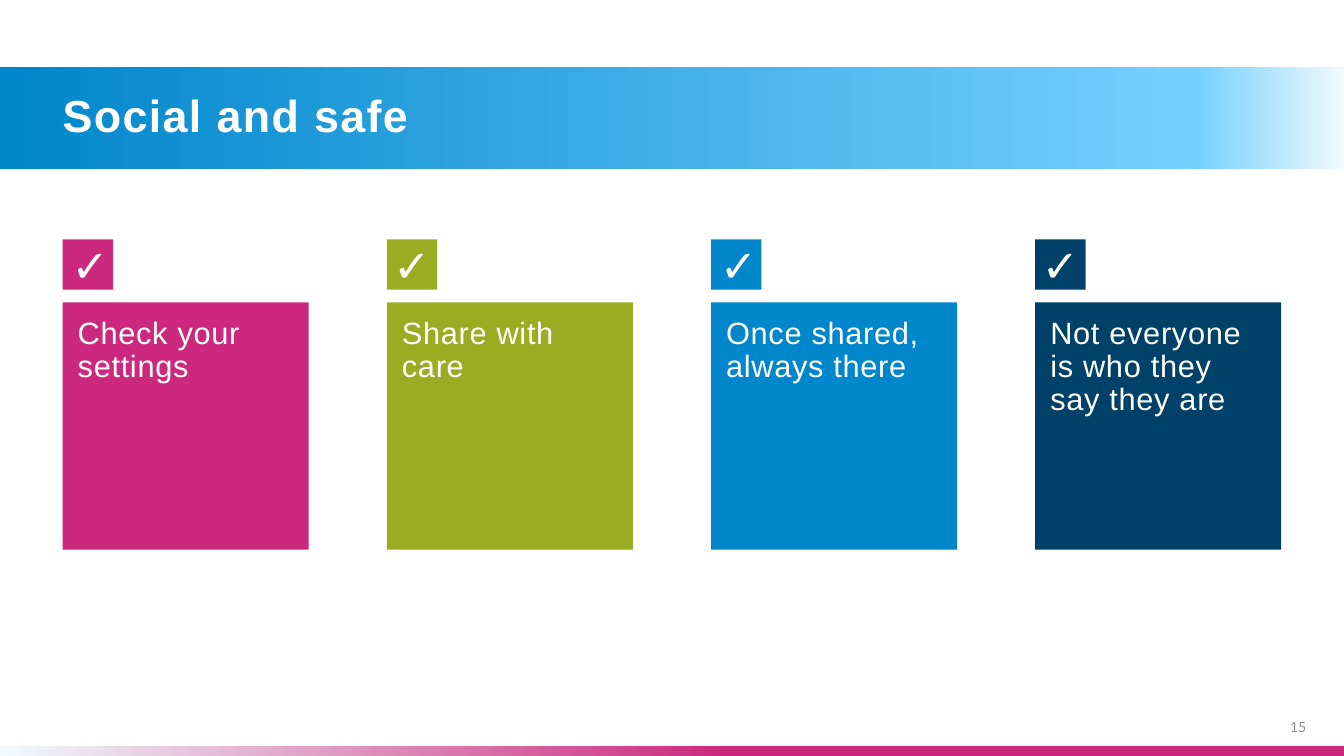
import dataclasses

import lxml.etree
import pptx
import pptx.dml.color
import pptx.enum.shapes
import pptx.enum.text
import pptx.oxml
import pptx.oxml.ns
import pptx.util

Cm = pptx.util.Cm
Pt = pptx.util.Pt
Align = pptx.enum.text.PP_ALIGN
Anchor = pptx.enum.text.MSO_ANCHOR
qn = pptx.oxml.ns.qn


@dataclasses.dataclass(frozen=True)
class Theme:
    pink: str = "CC297E"
    green: str = "98AD22"
    blue: str = "0086CB"
    navy: str = "004169"
    sky: str = "75D0FF"
    mist: str = "F0FAFF"
    white: str = "FFFFFF"
    grey: str = "8C8C8C"
    font: str = "Arial"
    number_font: str = "Lato"
    title_size: int = 32
    check_size: int = 32
    card_size: int = 22
    number_size: int = 10


THEME = Theme()
PAGE_WIDTH, PAGE_HEIGHT = 33.87, 19.05
MARGIN = 1.58

# Message, colour, and sideways shift of the tick in cm
CARDS = [
    ("Check your settings", THEME.pink, 0.06),
    ("Share with care", THEME.green, 0),
    ("Once shared, always there", THEME.blue, 0.06),
    ("Not everyone is who they say they are", THEME.navy, 0),
]


def add_rectangle(page, box, color=None):
    shape = page.shapes.add_shape(
        pptx.enum.shapes.MSO_SHAPE.RECTANGLE, *map(Cm, box))
    shape.shadow.inherit = False
    shape.line.fill.background()
    if color:
        shape.fill.solid()
        shape.fill.fore_color.rgb = pptx.dml.color.RGBColor.from_string(color)
    return shape


def add_gradient_bar(page, box, stops, angle):
    shape = add_rectangle(page, box)
    shape.fill.gradient()
    shape.fill.gradient_angle = angle
    stop_list = shape._element.spPr.find(qn("a:gradFill")).find(qn("a:gsLst"))
    for old_stop in list(stop_list):
        stop_list.remove(old_stop)
    for percent, color in stops:
        stop = lxml.etree.SubElement(
            stop_list, qn("a:gs"), pos=str(percent * 1000))
        lxml.etree.SubElement(stop, qn("a:srgbClr"), val=color)


def add_text_shadow(span):
    effects = pptx.oxml.parse_xml(
        f'<a:effectLst {pptx.oxml.ns.nsdecls("a")}>'
        '<a:outerShdw blurRad="38100" dist="38100" dir="2700000" algn="tl">'
        '<a:srgbClr val="000000"><a:alpha val="43000"/></a:srgbClr>'
        '</a:outerShdw></a:effectLst>')
    span._r.get_or_add_rPr().find(qn("a:solidFill")).addnext(effects)


def write_text(shape, text, size, color=THEME.white, font=THEME.font,
               bold=False, align=Align.LEFT, anchor=Anchor.MIDDLE, inset=0,
               line_spacing=1.0, tracking=0, shadow=False):
    frame = shape.text_frame
    frame.word_wrap = True
    frame.vertical_anchor = anchor
    frame.margin_left = frame.margin_right = Cm(inset)
    frame.margin_top = frame.margin_bottom = Cm(inset)
    para = frame.paragraphs[0]
    para.alignment = align
    para.line_spacing = line_spacing
    span = para.add_run()
    span.text = text
    span.font.name = font
    span.font.size = Pt(size)
    span.font.bold = bold
    span.font.color.rgb = pptx.dml.color.RGBColor.from_string(color)
    if tracking:
        span._r.get_or_add_rPr().set("spc", str(round(tracking * 100)))
    if shadow:
        add_text_shadow(span)


def add_label(page, box, text, size, **text_format):
    label = page.shapes.add_textbox(*map(Cm, box))
    write_text(label, text, size, **text_format)


def add_title_band(page, box, title):
    left, top, width, height = box
    add_gradient_bar(page, box, [(0, THEME.mist), (11, THEME.sky),
                                 (100, THEME.blue)], 180)
    title_height = 1.5
    title_box = (left + MARGIN, top + (height - title_height) / 2,
                 29.2, title_height)
    add_label(page, title_box, title, THEME.title_size, bold=True,
              line_spacing=0.9, tracking=1, shadow=True)


def add_footer(page, box, number):
    left, top, width, height = box
    add_gradient_bar(page, box, [(0, THEME.mist), (54, THEME.pink)], 0)
    number_box = (left + width - 2.32, top - 1.3, 1.37, 1.02)
    add_label(page, number_box, number, THEME.number_size, color=THEME.grey,
              font=THEME.number_font, align=Align.RIGHT, anchor=Anchor.BOTTOM)


def add_card(page, box, message, color, tick_shift):
    left, top, width, height = box
    tile, gap = 1.27, 0.32

    # Tick tile
    tile_top = top - 1.6
    tile_box = (left, tile_top, tile, tile)
    add_rectangle(page, tile_box, color)

    # Message square below the tile
    square_top = tile_top + tile + gap
    square = add_rectangle(
        page, (left, square_top, width, top + height - square_top), color)
    write_text(square, message, THEME.card_size, anchor=Anchor.TOP,
               inset=0.38, line_spacing=0.9, tracking=0.5)

    # Tick, centred on its tile
    tick = 1.96
    tick_box = (left + (tile - tick) / 2 + tick_shift,
                tile_top + (tile - tick) / 2, tick, tick)
    add_label(page, tick_box, "✓", THEME.check_size, bold=True,
              align=Align.CENTER)


def add_card_row(page, box):
    left, top, width, height = box
    card_width = 6.2
    pitch = (width - card_width) / (len(CARDS) - 1)
    for index, card in enumerate(CARDS):
        add_card(page, (left + index * pitch, top, card_width, height), *card)


def main():
    deck = pptx.Presentation()
    deck.slide_width, deck.slide_height = Cm(PAGE_WIDTH), Cm(PAGE_HEIGHT)
    page = deck.slides.add_slide(deck.slide_layouts[6])
    add_title_band(page, (0, 1.68, PAGE_WIDTH, 2.57), "Social and safe")
    add_footer(page, (0, 18.8, PAGE_WIDTH, 0.25), "15")
    add_card_row(page, (MARGIN, 7.63, PAGE_WIDTH - 2 * MARGIN, 6.22))
    deck.save("out.pptx")


if __name__ == "__main__":
    main()
